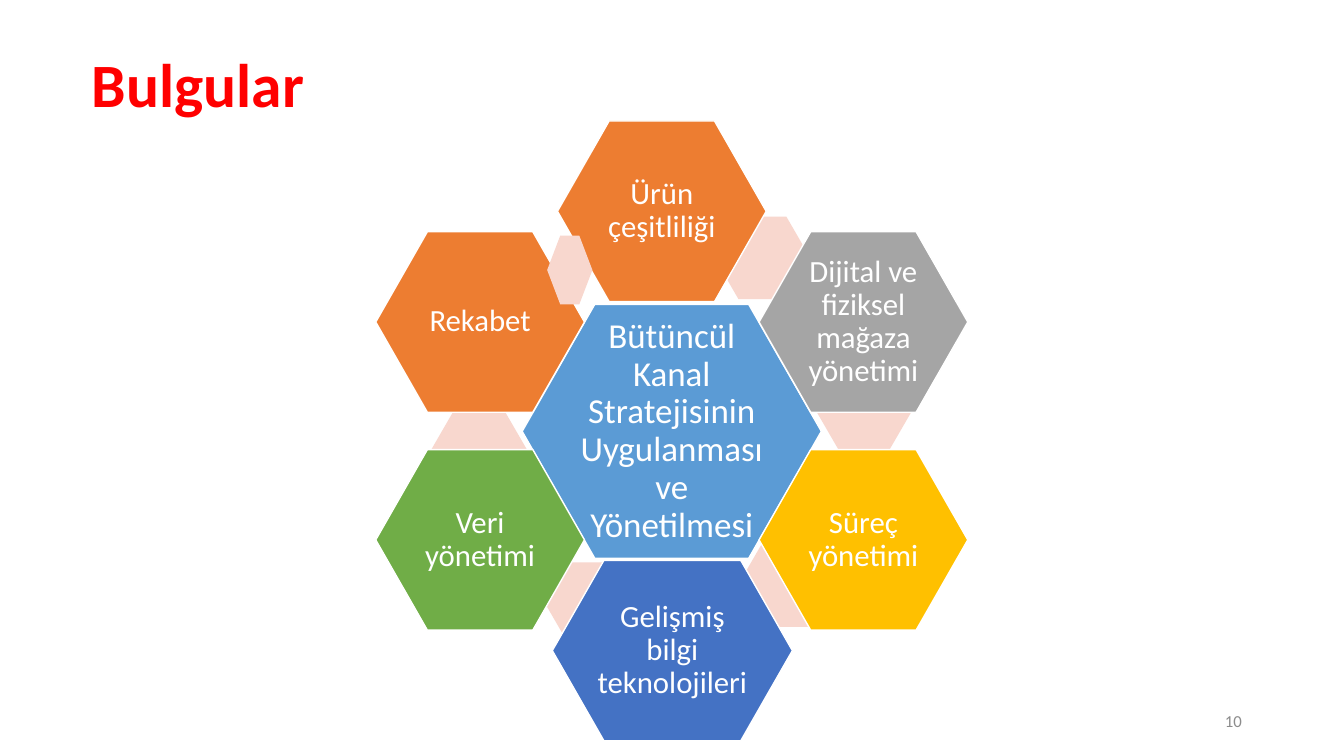
from dataclasses import dataclass

import pptx
import pptx.dml.color
import pptx.enum.shapes
import pptx.enum.text
import pptx.shapes.autoshape
import pptx.slide
import pptx.text.text
import pptx.util

Cm = pptx.util.Cm
Pt = pptx.util.Pt
RGBColor = pptx.dml.color.RGBColor
PP_ALIGN = pptx.enum.text.PP_ALIGN
MSO_ANCHOR = pptx.enum.text.MSO_ANCHOR

FONT = "Calibri"
RED = RGBColor(0xFF, 0x00, 0x00)
WHITE = RGBColor(0xFF, 0xFF, 0xFF)
GREY_TEXT = RGBColor(0x8C, 0x8C, 0x8C)
BLUE = RGBColor(0x5B, 0x9B, 0xD5)
ORANGE = RGBColor(0xED, 0x7D, 0x31)
GREY = RGBColor(0xA5, 0xA5, 0xA5)
YELLOW = RGBColor(0xFF, 0xC0, 0x00)
DARK_BLUE = RGBColor(0x44, 0x72, 0xC4)
GREEN = RGBColor(0x70, 0xAD, 0x47)
PINK = RGBColor(0xF8, 0xD7, 0xCE)

LEFT_COLUMN, RIGHT_COLUMN = 9.47, 19.13
UPPER_ROW, LOWER_ROW = 5.84, 11.33


@dataclass(frozen=True)
class Link:
    left: float
    top: float
    width: float = 2.41
    height: float = 2.08


@dataclass(frozen=True)
class Topic:
    text: str
    left: float
    top: float
    color: RGBColor
    width: float = 5.26
    height: float = 4.55
    size: int = 22


HEXAGONS: list[Link | Topic] = [
    Topic("Bütüncül Kanal Stratejisinin Uygulanması ve Yönetilmesi",
          13.16, 7.67, BLUE, 7.54, 6.4, 25),
    Link(18.01, 5.46),
    Topic("Ürün çeşitliliği", 14.05, 3.05, ORANGE),
    Link(20.57, 9.32),
    Topic("Dijital ve fiziksel mağaza yönetimi", RIGHT_COLUMN, UPPER_ROW, GREY),
    Link(18.59, 13.72),
    Topic("Süreç yönetimi", RIGHT_COLUMN, LOWER_ROW, YELLOW),
    Link(13.74, 14.17),
    Topic("Gelişmiş bilgi teknolojileri", 13.92, 14.12, DARK_BLUE, 6.05),
    Link(10.87, 10.29),
    Topic("Veri yönetimi", LEFT_COLUMN, LOWER_ROW, GREEN),
    Topic("Rekabet", LEFT_COLUMN, UPPER_ROW, ORANGE),
    Link(13.79, 5.94, 1.14, 1.73),
]


def write_text(text_frame: pptx.text.text.TextFrame, text: str, size: int,
               color: RGBColor, alignment: PP_ALIGN, bold: bool = False,
               line_spacing: float = 0.9) -> None:
    text_frame.text = text
    text_frame.word_wrap = True
    text_frame.auto_size = pptx.enum.text.MSO_AUTO_SIZE.NONE
    text_frame.vertical_anchor = MSO_ANCHOR.MIDDLE
    paragraph = text_frame.paragraphs[0]
    paragraph.alignment = alignment
    paragraph.line_spacing = line_spacing
    font = paragraph.runs[0].font
    font.name = FONT
    font.size = Pt(size)
    font.bold = bold
    font.color.rgb = color


def add_hexagon(slide: pptx.slide.Slide, box: Link | Topic,
                color: RGBColor, slant: float) -> pptx.shapes.autoshape.Shape:
    shape = slide.shapes.add_shape(
        pptx.enum.shapes.MSO_SHAPE.HEXAGON,
        Cm(box.left), Cm(box.top), Cm(box.width), Cm(box.height))
    shape.adjustments[0] = slant
    shape.shadow.inherit = False
    shape.fill.solid()
    shape.fill.fore_color.rgb = color
    return shape


def add_link(slide: pptx.slide.Slide, link: Link) -> None:
    add_hexagon(slide, link, PINK, 0.289).line.fill.background()


def add_topic(slide: pptx.slide.Slide, topic: Topic) -> None:
    shape = add_hexagon(slide, topic, topic.color, 0.286)
    shape.line.color.rgb = WHITE
    shape.line.width = Pt(1)
    text_frame = shape.text_frame
    text_frame.margin_left = text_frame.margin_right = Cm(0.08)
    text_frame.margin_top = text_frame.margin_bottom = Cm(0.08)
    write_text(text_frame, topic.text, topic.size, WHITE, PP_ALIGN.CENTER)


def add_title(slide: pptx.slide.Slide) -> None:
    title = slide.shapes.title
    title.left, title.top = Cm(2.06), Cm(0.36)
    title.width, title.height = Cm(29.21), Cm(3.68)
    write_text(title.text_frame, "Bulgular", 44, RED, PP_ALIGN.LEFT, bold=True)


def add_page_number(slide: pptx.slide.Slide) -> None:
    page_number = slide.shapes.add_textbox(Cm(23.93), Cm(17.65), Cm(7.62), Cm(1.02))
    write_text(page_number.text_frame, "10", 12, GREY_TEXT, PP_ALIGN.RIGHT,
               line_spacing=1.0)


def main() -> None:
    presentation = pptx.Presentation()
    presentation.slide_width = Cm(33.87)
    presentation.slide_height = Cm(19.05)
    slide = presentation.slides.add_slide(presentation.slide_layouts[5])
    add_title(slide)
    for hexagon in HEXAGONS:
        if isinstance(hexagon, Topic):
            add_topic(slide, hexagon)
        else:
            add_link(slide, hexagon)
    add_page_number(slide)
    presentation.save("out.pptx")


if __name__ == "__main__":
    main()
